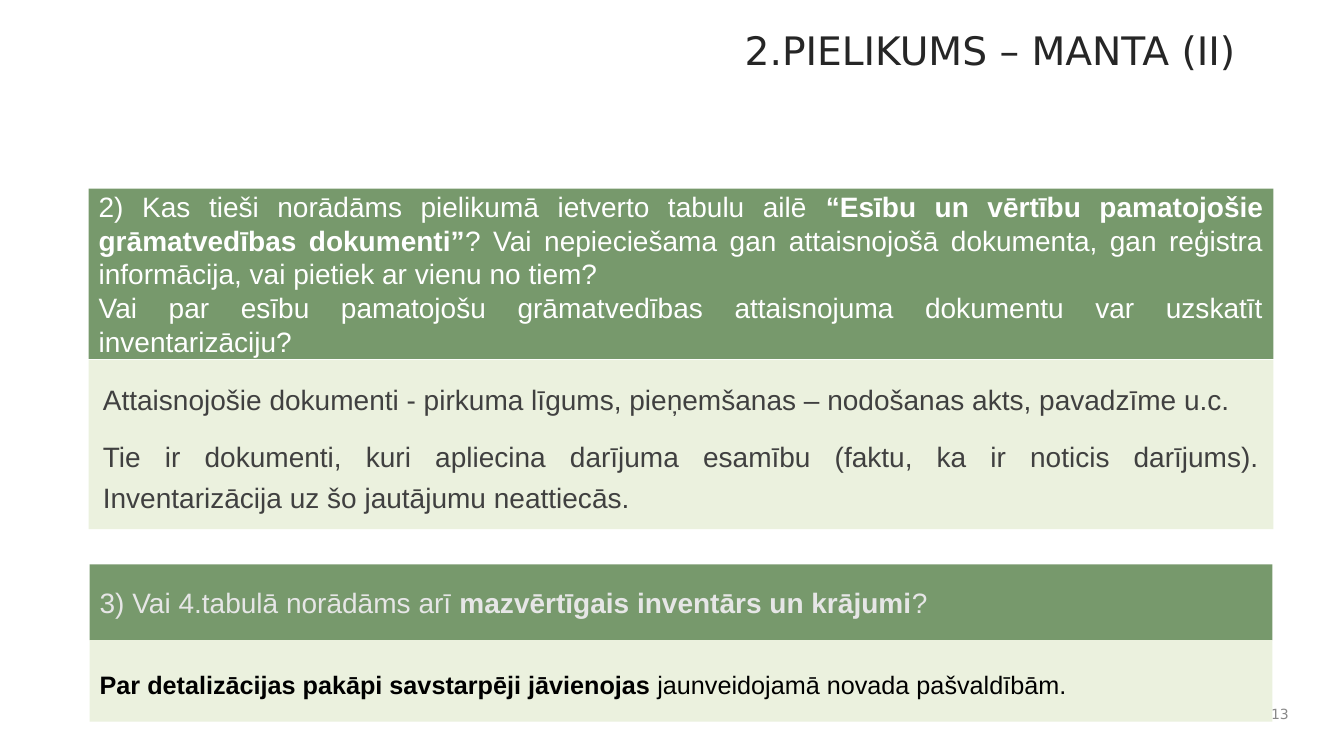
from dataclasses import dataclass

from lxml.etree import SubElement
from pptx import Presentation
from pptx.dml.color import RGBColor
from pptx.enum.shapes import MSO_SHAPE
from pptx.enum.text import MSO_ANCHOR, PP_ALIGN
from pptx.oxml.ns import qn
from pptx.util import Inches, Pt


@dataclass(frozen=True)
class Theme:
    """Colours, fonts and type sizes of the slide."""
    green: str = "4A773C"
    pale: str = "EBF1DE"
    white: str = "FFFFFF"
    soft_white: str = "E6E6E6"
    black: str = "000000"
    title: str = "262626"
    body: str = "404040"
    number: str = "898989"
    head_font: str = "DejaVu Sans"
    body_font: str = "Arial"
    title_size: int = 28
    body_size: int = 20
    note_size: int = 18
    number_size: int = 10


THEME = Theme()


def write(s, paragraphs, color, size=THEME.body_size, font=THEME.body_font,
          align=PP_ALIGN.LEFT, anchor=MSO_ANCHOR.MIDDLE, spacing=1.0, gap=0, inset=None):
    """Fill a shape with paragraphs, each a list of (text, bold) runs."""
    tf = s.text_frame
    tf.word_wrap = True
    tf.vertical_anchor = anchor
    if inset is not None:
        tf.margin_left = tf.margin_right = tf.margin_top = tf.margin_bottom = Inches(inset)
    for i, runs in enumerate(paragraphs):
        p = tf.paragraphs[0] if i == 0 else tf.add_paragraph()
        p.alignment = align
        p.line_spacing = spacing
        if i:
            p.space_before = Pt(gap)
        for text, bold in runs:
            r = p.add_run()
            r.text = text
            r.font.name = font
            r.font.size = Pt(size)
            r.font.bold = bold
            r.font.color.rgb = RGBColor.from_string(color)


def add_label(slide, left, top, width, height, text, **style):
    """Add a right-aligned line of text in the heading font."""
    s = slide.shapes.add_textbox(Inches(left), Inches(top), Inches(width), Inches(height))
    write(s, [[(text, False)]], font=THEME.head_font, align=PP_ALIGN.RIGHT, **style)


def add_panel(slide, left, top, width, height, fill, paragraphs, opacity=100, **style):
    """Add a borderless filled rectangle with text."""
    s = slide.shapes.add_shape(MSO_SHAPE.RECTANGLE, Inches(left), Inches(top),
                               Inches(width), Inches(height))
    s.shadow.inherit = False
    s.line.fill.background()
    s.fill.solid()
    s.fill.fore_color.rgb = RGBColor.from_string(fill)
    if opacity < 100:
        color = s.fill._xPr.find(qn("a:solidFill"))[0]
        SubElement(color, qn("a:alpha")).set("val", str(opacity * 1000))
    write(s, paragraphs, **style)


def add_question(slide, left, top, width, height, paragraphs, **style):
    """Add a green question panel."""
    add_panel(slide, left, top, width, height, THEME.green, paragraphs, opacity=75, **style)


def add_answer(slide, left, top, width, height, paragraphs, **style):
    """Add a pale answer panel."""
    add_panel(slide, left, top, width, height, THEME.pale, paragraphs, spacing=1.2, **style)


def main():
    """Build the slide and save it."""
    prs = Presentation()
    prs.slide_width, prs.slide_height = Inches(13.33), Inches(7.5)
    slide = prs.slides.add_slide(prs.slide_layouts[6])

    add_label(slide, 1.85, 0.21, 10.5, 0.9, "2.PIELIKUMS – MANTA (II)",
              color=THEME.title, size=THEME.title_size, anchor=MSO_ANCHOR.TOP)
    add_label(slide, 12.44, 6.92, 0.44, 0.33, "13",
              color=THEME.number, size=THEME.number_size)

    add_answer(slide, 0.88, 3.57, 11.75, 1.68, [
        [("Attaisnojošie dokumenti - pirkuma līgums, pieņemšanas – nodošanas akts, "
          "pavadzīme u.c.", False)],
        [("Tie ir dokumenti, kuri apliecina darījuma esamību (faktu, ka ir noticis darījums). "
          "Inventarizācija uz šo jautājumu neattiecās.", False)],
    ], color=THEME.body, align=PP_ALIGN.JUSTIFY, gap=12.5, inset=0.14)
    add_question(slide, 0.88, 1.87, 11.75, 1.69, [
        [("2) Kas tieši norādāms pielikumā ietverto tabulu ailē ", False),
         ("“Esību un vērtību pamatojošie grāmatvedības dokumenti”", True),
         ("? Vai nepieciešama gan attaisnojošā dokumenta, gan reģistra informācija, "
          "vai pietiek ar vienu no tiem?", False)],
        [("Vai par esību pamatojošu grāmatvedības attaisnojuma dokumentu var uzskatīt "
          "inventarizāciju?", False)],
    ], color=THEME.white, align=PP_ALIGN.JUSTIFY)

    add_question(slide, 0.89, 5.6, 11.73, 0.75, [
        [("3) Vai 4.tabulā norādāms arī ", False),
         ("mazvērtīgais inventārs un krājumi", True), ("?", False)],
    ], color=THEME.soft_white)
    add_answer(slide, 0.89, 6.35, 11.73, 0.81, [
        [("Par detalizācijas pakāpi savstarpēji jāvienojas ", True),
         ("jaunveidojamā novada pašvaldībām.", False)],
    ], color=THEME.black, size=THEME.note_size)

    prs.save("out.pptx")


if __name__ == "__main__":
    main()
